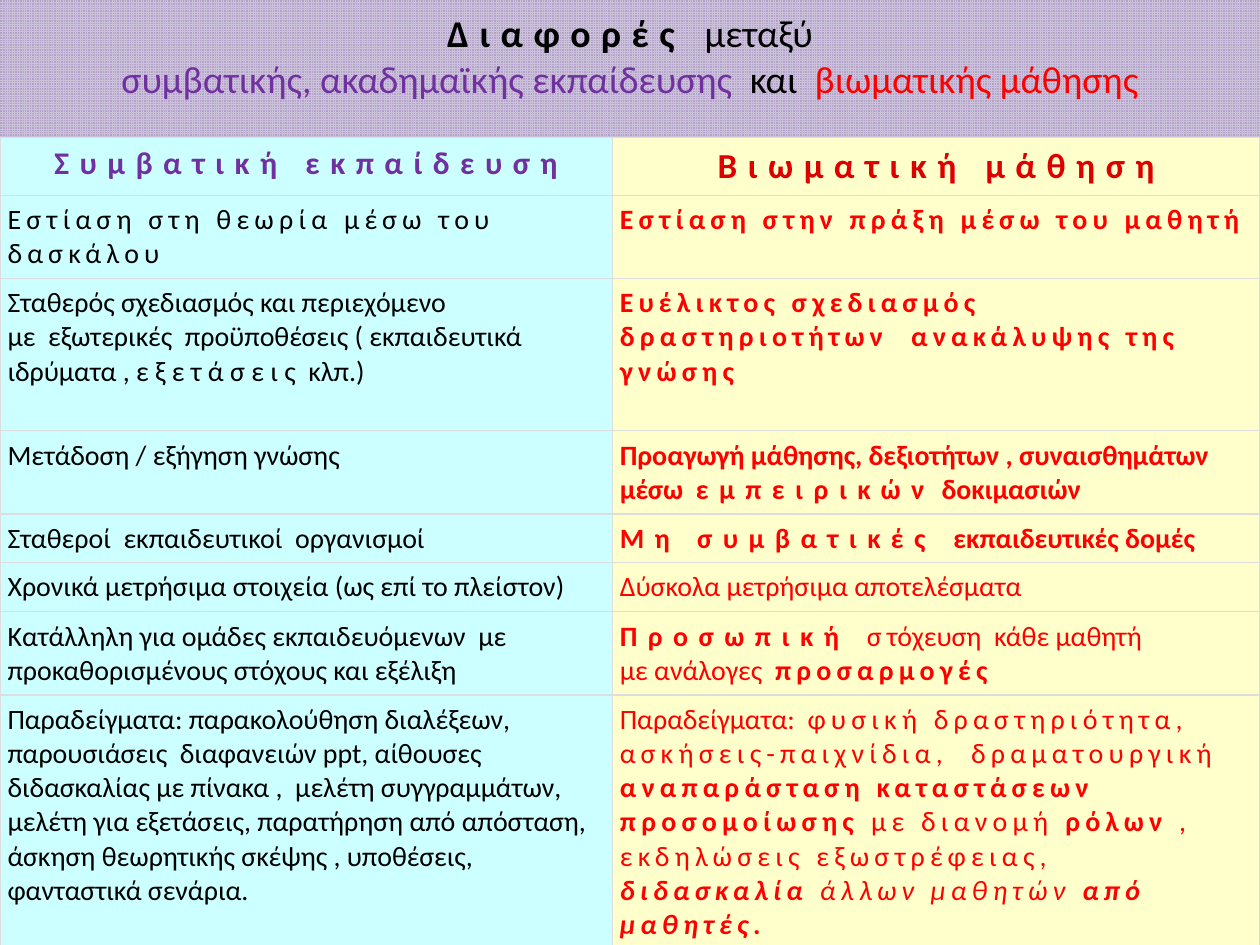
from lxml import etree
from pptx import Presentation
from pptx.dml.color import RGBColor
from pptx.enum.dml import MSO_PATTERN
from pptx.enum.text import MSO_ANCHOR, PP_ALIGN
from pptx.oxml.ns import qn
from pptx.util import Inches, Pt

SMALL_GRID = MSO_PATTERN.SMALL_GRID
TOP = MSO_ANCHOR.TOP
CENTER = PP_ALIGN.CENTER
LEFT = PP_ALIGN.LEFT

BLACK = RGBColor(0x00, 0x00, 0x00)
PURPLE = RGBColor(0x70, 0x30, 0xA0)
RED = RGBColor(0xFF, 0x00, 0x00)
DARK_RED = RGBColor(0xDD, 0x00, 0x00)
CYAN = RGBColor(0xCC, 0xFF, 0xFF)
CREAM = RGBColor(0xFF, 0xFF, 0xCC)
LILAC = RGBColor(0xCC, 0xC1, 0xDA)
MAUVE = RGBColor(0xB3, 0xA2, 0xC7)
GREY = RGBColor(0xDD, 0xDD, 0xDD)


def add_run(p, text, size, color, style="", spacing=0):
    r = p.add_run()
    r.text = text
    r.font.name = "Calibri"
    r.font.size = Pt(size)
    r.font.color.rgb = color
    r.font.bold = "b" in style
    r.font.italic = "i" in style
    r._r.get_or_add_rPr().set("spc", str(spacing * 100))


def add_borders(cell):
    tcPr = cell._tc.get_or_add_tcPr()
    for i, side in enumerate(("lnL", "lnR", "lnT", "lnB")):
        ln = etree.Element(qn("a:" + side), w=str(Pt(0.75)))
        fill = etree.SubElement(ln, qn("a:solidFill"))
        etree.SubElement(fill, qn("a:srgbClr"), val=str(GREY))
        tcPr.insert(i, ln)


prs = Presentation()
prs.slide_width = Inches(10)
prs.slide_height = Inches(7.5)
s = prs.slides.add_slide(prs.slide_layouts[6])
bg = s.background.fill
bg.patterned()
bg.pattern = SMALL_GRID
bg.fore_color.rgb = LILAC
bg.back_color.rgb = MAUVE

title = s.shapes.add_textbox(0, 0, Inches(10), Inches(1.09))
tf = title.text_frame
tf.word_wrap = True
tf.vertical_anchor = TOP
tf.margin_top = Inches(0.08)
p = tf.paragraphs[0]
p.alignment = CENTER
add_run(p, "Διαφορές ", 21.6, BLACK, "b", 6)
add_run(p, "μεταξύ", 21.6, BLACK)
p.add_line_break()
add_run(p, "συμβατικής, ακαδημαϊκής εκπαίδευσης  ", 21.6, PURPLE)
add_run(p, "και ", 21.6, BLACK)
add_run(p, " βιωματικής μάθησης", 21.6, RED)

HEADERS = [("Συμβατική εκπαίδευση", 18, PURPLE), ("Βιωματική μάθηση", 20, DARK_RED)]

ROWS = [
    (0.66,
     [[("Εστίαση στη θεωρία μέσω του δασκάλου", "", 3)]],
     [[("Εστίαση στην πράξη μέσω του μαθητή", "b", 3)]]),
    (1.21,
     [[("Σταθερός σχεδιασμός και περιεχόμενο",)],
      [("με  εξωτερικές  προϋποθέσεις ( εκπαιδευτικά ιδρύματα , ε ξ ε τ ά σ ε ι ς  κλπ.)",)]],
     [[("Ευέλικτος σχεδιασμός δραστηριοτήτων  ανακάλυψης της γνώσης", "b", 3)]]),
    (0.66,
     [[("Μετάδοση / εξήγηση γνώσης",)]],
     [[("Προαγωγή μάθησης, δεξιοτήτων , συναισθημάτων μέσω  ", "b"),
       ("εμπειρικών", "b", 6), (" δοκιμασιών", "b")]]),
    (0.38,
     [[("Σταθεροί  εκπαιδευτικοί  οργανισμοί",)]],
     [[("Μη συμβατικές ", "b", 6), ("εκπαιδευτικές δομές", "b")]]),
    (0.39,
     [[("Χρονικά μετρήσιμα στοιχεία (ως επί το πλείστον)",)]],
     [[("Δύσκολα μετρήσιμα αποτελέσματα",)]]),
    (0.66,
     [[("Κατάλληλη για ομάδες εκπαιδευόμενων  με προκαθορισμένους στόχους και εξέλιξη",)]],
     [[("Προσωπική ", "b", 6), ("σ", "", 3), ("τόχευση  κάθε μαθητή",)],
      [("με ανάλογες  ",), ("προσαρμογές", "b", 3)]]),
    (1.99,
     [[("Παραδείγματα: παρακολούθηση διαλέξεων, παρουσιάσεις  διαφανειών ppt, "
        "αίθουσες  διδασκαλίας με πίνακα ,  μελέτη συγγραμμάτων, μελέτη για εξετάσεις, "
        "παρατήρηση από απόσταση,   άσκηση θεωρητικής σκέψης , υποθέσεις, "
        "φανταστικά σενάρια.",)]],
     [[("Παραδείγματα:  ",),
       ("φυσική δραστηριότητα,  ασκήσεις-παιχνίδια,  δραματουργική ", "", 3),
       ("αναπαράσταση καταστάσεων  προσομοίωσης", "b", 3),
       (" με διανομή ", "", 3), ("ρόλων", "b", 3),
       (" , εκδηλώσεις εξωστρέφειας, ", "", 3), ("διδασκαλία ", "bi", 3),
       ("άλλων μαθητών ", "i", 3), ("από μαθητές.", "bi", 3)]]),
]

heights = [0.46] + [row[0] for row in ROWS]
table = s.shapes.add_table(len(heights), 2, 0, Inches(1.09),
                           Inches(10), Inches(sum(heights))).table
table.first_row = False
table.horz_banding = False
for column, width in zip(table.columns, (4.86, 5.14)):
    column.width = Inches(width)

for i, height in enumerate(heights):
    table.rows[i].height = Inches(height)
    for j, (fill, color) in enumerate(((CYAN, BLACK), (CREAM, RED))):
        cell = table.cell(i, j)
        cell.fill.solid()
        cell.fill.fore_color.rgb = fill
        cell.margin_left = cell.margin_right = Inches(0.06)
        cell.margin_top = cell.margin_bottom = Inches(0.06)
        add_borders(cell)
        tf = cell.text_frame
        p = tf.paragraphs[0]
        if i == 0:
            text, size, header_color = HEADERS[j]
            p.alignment = CENTER
            add_run(p, text, size, header_color, "b", 6)
            continue
        for k, runs in enumerate(ROWS[i - 1][j + 1]):
            if k:
                p = tf.add_paragraph()
            p.alignment = LEFT
            for text, *style in runs:
                add_run(p, text, 16, color, *style)

prs.save("out.pptx")
